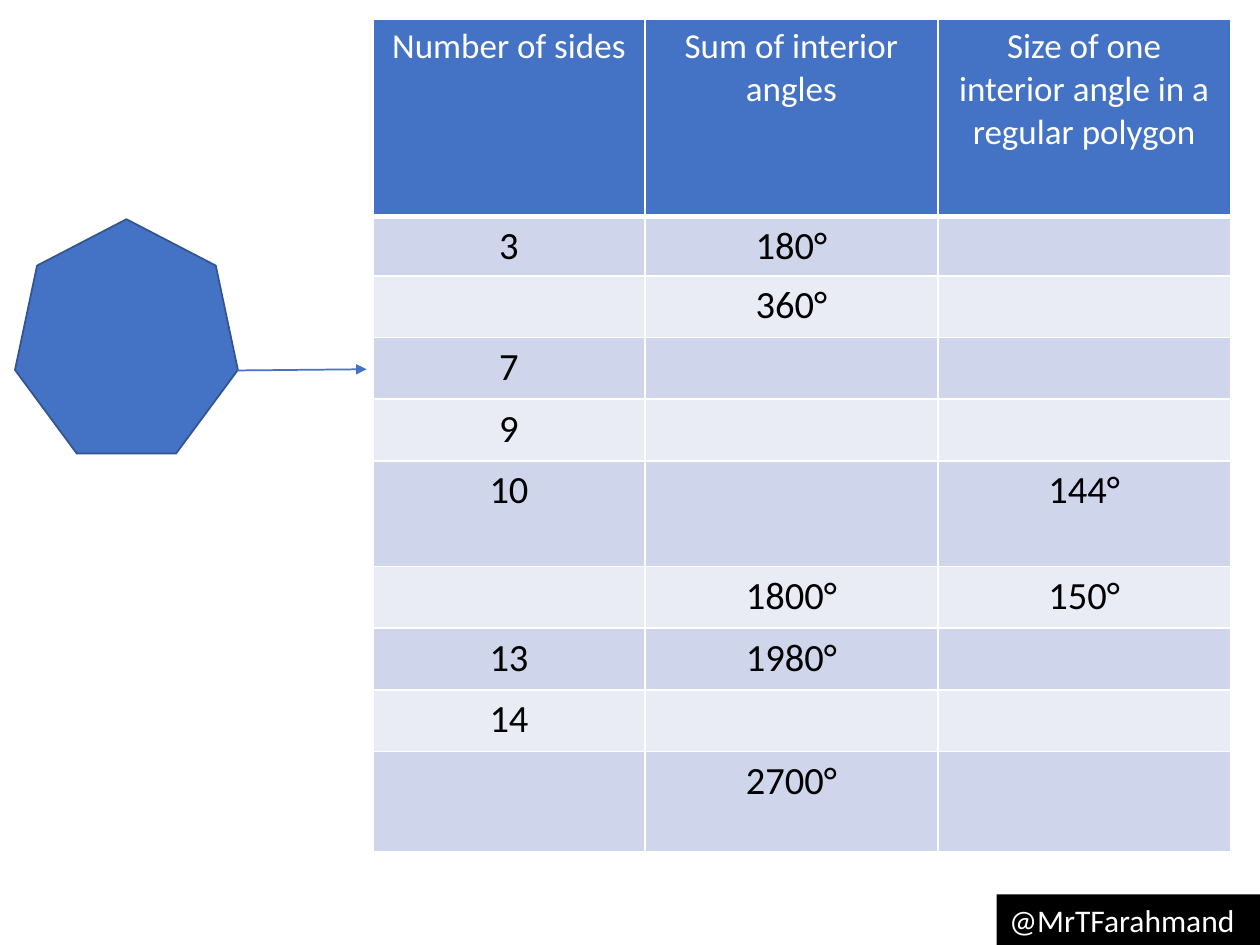
from lxml import etree
from pptx import Presentation
from pptx.dml.color import RGBColor
from pptx.enum.shapes import MSO_CONNECTOR, MSO_SHAPE
from pptx.enum.text import MSO_ANCHOR, PP_ALIGN
from pptx.oxml.ns import qn
from pptx.util import Pt

CENTER, LEFT = PP_ALIGN.CENTER, PP_ALIGN.LEFT
MIDDLE = MSO_ANCHOR.MIDDLE
HEPTAGON, RECTANGLE = MSO_SHAPE.HEPTAGON, MSO_SHAPE.RECTANGLE
STRAIGHT = MSO_CONNECTOR.STRAIGHT

# Content
HANDLE = "@MrTFarahmand"
HEADER = ("Number of sides", "Sum of interior angles",
          "Size of one interior angle in a regular polygon")
POLYGONS = [
    ("3", "180°", ""),
    ("", "360°", ""),
    ("7", "", ""),
    ("9", "", ""),
    ("10", "", "144°"),
    ("", "1800°", "150°"),
    ("13", "1980°", ""),
    ("14", "", ""),
    ("", "2700°", ""),
]

# Format
FONT = "Calibri"
COLORS = {"blue": "4472C4", "outline": "325491", "odd": "CFD5EA",
          "even": "E9EBF5", "white": "FFFFFF", "black": "000000"}
COLUMN_WIDTHS = (155.5, 167.3, 167.3)
ROW_HEIGHTS = (113, 33.8, 35.2, 35.2, 35.2, 60.5, 35.2, 35.2, 35.2, 57.6)


def color(name):
    return RGBColor.from_string(COLORS[name])


def write(frame, text, size, ink, align=LEFT):
    para = frame.paragraphs[0]
    para.alignment = align
    para.font.size = Pt(size)
    if text:
        span = para.add_run()
        span.text = text
        span.font.name = FONT
        span.font.size = Pt(size)
        span.font.bold = False
        span.font.color.rgb = color(ink)


def add_border(cell, side, width):
    line = etree.SubElement(cell._tc.get_or_add_tcPr(), qn(f"a:ln{side}"), w=str(Pt(width)))
    fill = etree.SubElement(line, qn("a:solidFill"))
    etree.SubElement(fill, qn("a:srgbClr"), val=COLORS["white"])


def add_shape(page, kind, fill, left, top, width, height):
    shape = page.shapes.add_shape(kind, Pt(left), Pt(top), Pt(width), Pt(height))
    shape.shadow.inherit = False
    shape.fill.solid()
    shape.fill.fore_color.rgb = color(fill)
    return shape


def add_angle_table(page):
    rows = [HEADER] + POLYGONS
    table = page.shapes.add_table(len(rows), len(HEADER), Pt(213.1), Pt(10.8),
                                  Pt(sum(COLUMN_WIDTHS)), Pt(sum(ROW_HEIGHTS))).table
    for column, width in zip(table.columns, COLUMN_WIDTHS):
        column.width = Pt(width)
    for r, (texts, height) in enumerate(zip(rows, ROW_HEIGHTS)):
        table.rows[r].height = Pt(height)
        band = "blue" if r == 0 else "odd" if r % 2 else "even"
        size, ink = (20, "white") if r == 0 else (22, "black")
        # The rule under the header is heavier than the others
        borders = {"L": 1, "R": 1, "T": 3 if r == 1 else 1, "B": 3 if r == 0 else 1}
        for c, text in enumerate(texts):
            cell = table.cell(r, c)
            for side, width in borders.items():
                add_border(cell, side, width)
            cell.fill.solid()
            cell.fill.fore_color.rgb = color(band)
            write(cell.text_frame, text, size, ink, CENTER)


def add_arrow(page, start, end):
    arrow = page.shapes.add_connector(STRAIGHT, *(Pt(v) for v in start + end))
    arrow.line.color.rgb = color("blue")
    arrow.line.width = Pt(1)
    etree.SubElement(arrow.line._get_or_add_ln(), qn("a:tailEnd"), type="triangle")
    etree.SubElement(arrow._element.spPr, qn("a:effectLst"))


def main():
    deck = Presentation()
    deck.slide_width, deck.slide_height = Pt(720), Pt(540)
    page = deck.slides.add_slide(deck.slide_layouts[6])

    # Author handle
    label = add_shape(page, RECTANGLE, "black", 569.5, 511, 150.5, 29)
    label.line.fill.background()
    label.text_frame.word_wrap = True
    label.text_frame.vertical_anchor = MIDDLE
    write(label.text_frame, HANDLE, 18, "white")

    add_angle_table(page)

    # Heptagon pointing to its table row
    heptagon = add_shape(page, HEPTAGON, "blue", 8.6, 125.3, 127.4, 133.9)
    heptagon.line.color.rgb = color("outline")
    heptagon.line.width = Pt(1)
    add_arrow(page, (135.4, 211.7), (209.5, 211))

    deck.save("out.pptx")


if __name__ == "__main__":
    main()
